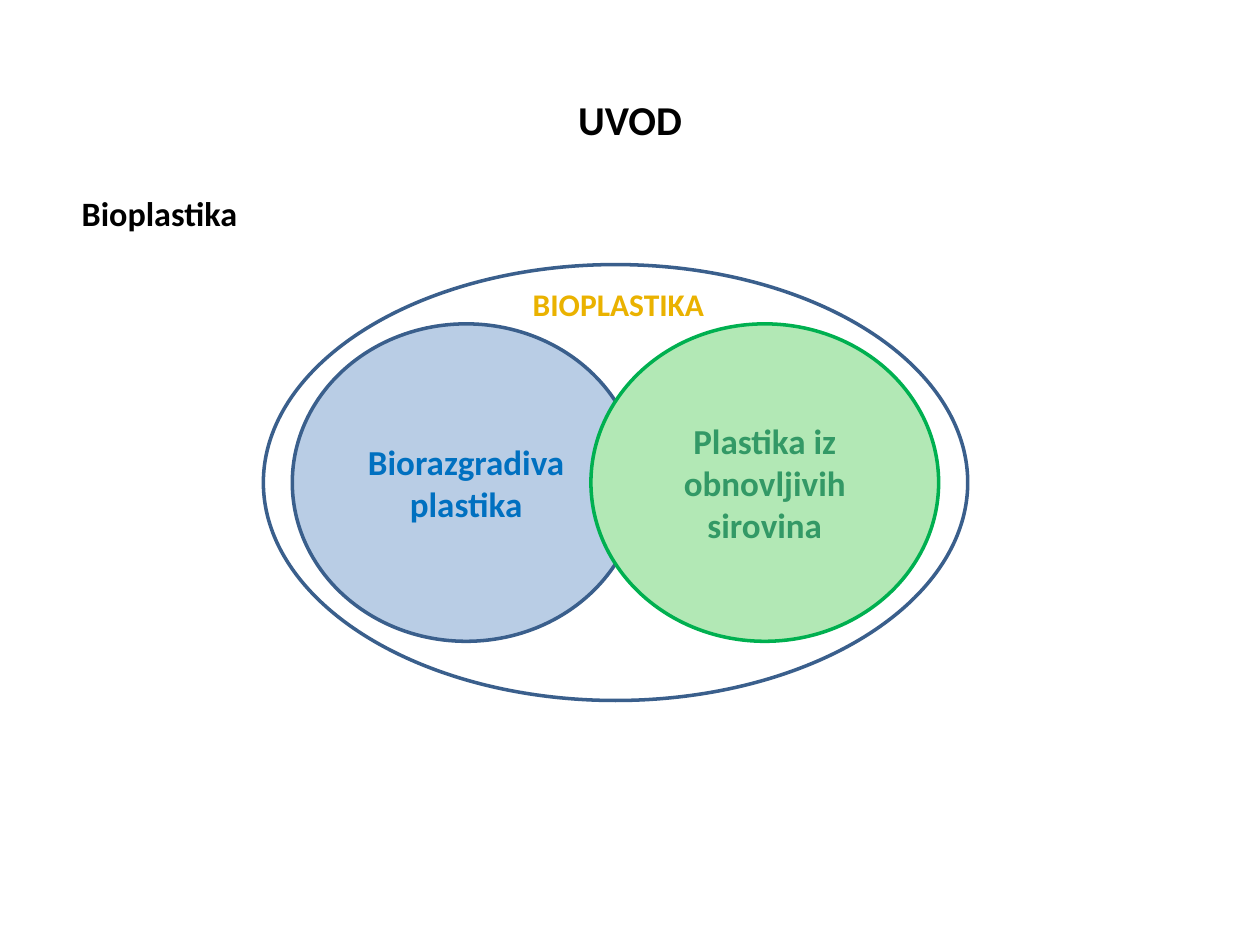
from dataclasses import dataclass

from pptx import Presentation
from pptx.dml.color import RGBColor
from pptx.enum.shapes import MSO_SHAPE as Shape
from pptx.enum.text import MSO_ANCHOR as Anchor, PP_ALIGN as Align
from pptx.util import Inches, Pt

TITLE_ONLY = 5


@dataclass(frozen=True)
class Theme:
    font: str = "Calibri"
    black: str = "000000"
    outline: str = "3A5F8C"
    blue_fill: str = "B9CDE5"
    blue_text: str = "0070C0"
    green_fill: str = "B2E8B5"
    green_line: str = "00B050"
    green_text: str = "339966"
    gold: str = "EAB200"
    title_size: float = 23.4
    heading_size: float = 19.5
    circle_size: float = 20
    label_size: float = 18
    line_width: float = 2


class SlideBuilder:
    """Places elements by shares of the slide's width and height."""

    def __init__(self, deck, theme):
        self.deck, self.theme = deck, theme
        self.slide = deck.slides.add_slide(deck.slide_layouts[TITLE_ONLY])

    def box(self, left, top, width, height):
        across, down = self.deck.slide_width, self.deck.slide_height
        return (round(left * across), round(top * down),
                round(width * across), round(height * down))

    def fill_text(self, frame, lines, size, color, align, anchor=Anchor.TOP, wrap=True):
        frame.word_wrap = wrap
        frame.vertical_anchor = anchor
        for number, line in enumerate(lines):
            paragraph = frame.add_paragraph() if number else frame.paragraphs[0]
            paragraph.alignment = align
            run = paragraph.add_run()
            run.text = line
            run.font.name, run.font.size, run.font.bold = self.theme.font, Pt(size), True
            run.font.color.rgb = RGBColor.from_string(color)

    def title(self, text, area):
        title = self.slide.shapes.title
        title.left, title.top, title.width, title.height = self.box(*area)
        self.fill_text(title.text_frame, [text], self.theme.title_size,
                       self.theme.black, Align.CENTER)

    def text(self, text, area, size, color, align=Align.LEFT, wrap=True):
        frame = self.slide.shapes.add_textbox(*self.box(*area)).text_frame
        self.fill_text(frame, [text], size, color, align, wrap=wrap)

    def oval(self, kind, area, line, fill=None, lines=(), color=None):
        oval = self.slide.shapes.add_shape(kind, *self.box(*area))
        oval.shadow.inherit = False
        if fill:
            oval.fill.solid()
            oval.fill.fore_color.rgb = RGBColor.from_string(fill)
        else:
            oval.fill.background()
        oval.line.color.rgb = RGBColor.from_string(line)
        oval.line.width = Pt(self.theme.line_width)
        self.fill_text(oval.text_frame, lines, self.theme.circle_size, color,
                       Align.CENTER, Anchor.MIDDLE)


def main():
    deck = Presentation()
    deck.slide_width, deck.slide_height = Inches(10), Inches(7.5)
    theme = Theme()
    page = SlideBuilder(deck, theme)

    # Title and heading
    page.title("UVOD", (0, 0.7 / 7.5, 1, 0.55 / 7.5))
    page.text("Bioplastika", (0.055, 1.48 / 7.5, 0.85, 0.61 / 7.5),
              theme.heading_size, theme.black)

    # Two overlapping kinds of bioplastics
    kinds = [
        (0.232, theme.outline, theme.blue_fill,
         ["Biorazgradiva", "plastika"], theme.blue_text),
        (0.469, theme.green_line, theme.green_fill,
         ["Plastika iz obnovljivih sirovina"], theme.green_text),
    ]
    for left, line, fill, lines, color in kinds:
        page.oval(Shape.FLOWCHART_CONNECTOR, (left, 2.57 / 7.5, 0.276, 2.52 / 7.5),
                  line, fill, lines, color)

    # Enclosing set and its label
    page.oval(Shape.OVAL, (0.209, 0.28, 0.559, 3.46 / 7.5), theme.outline)
    page.text("BIOPLASTIKA", (0.413, 2.21 / 7.5, 0.157, 0.4 / 7.5),
              theme.label_size, theme.gold, wrap=False)

    deck.save("out.pptx")


if __name__ == "__main__":
    main()
